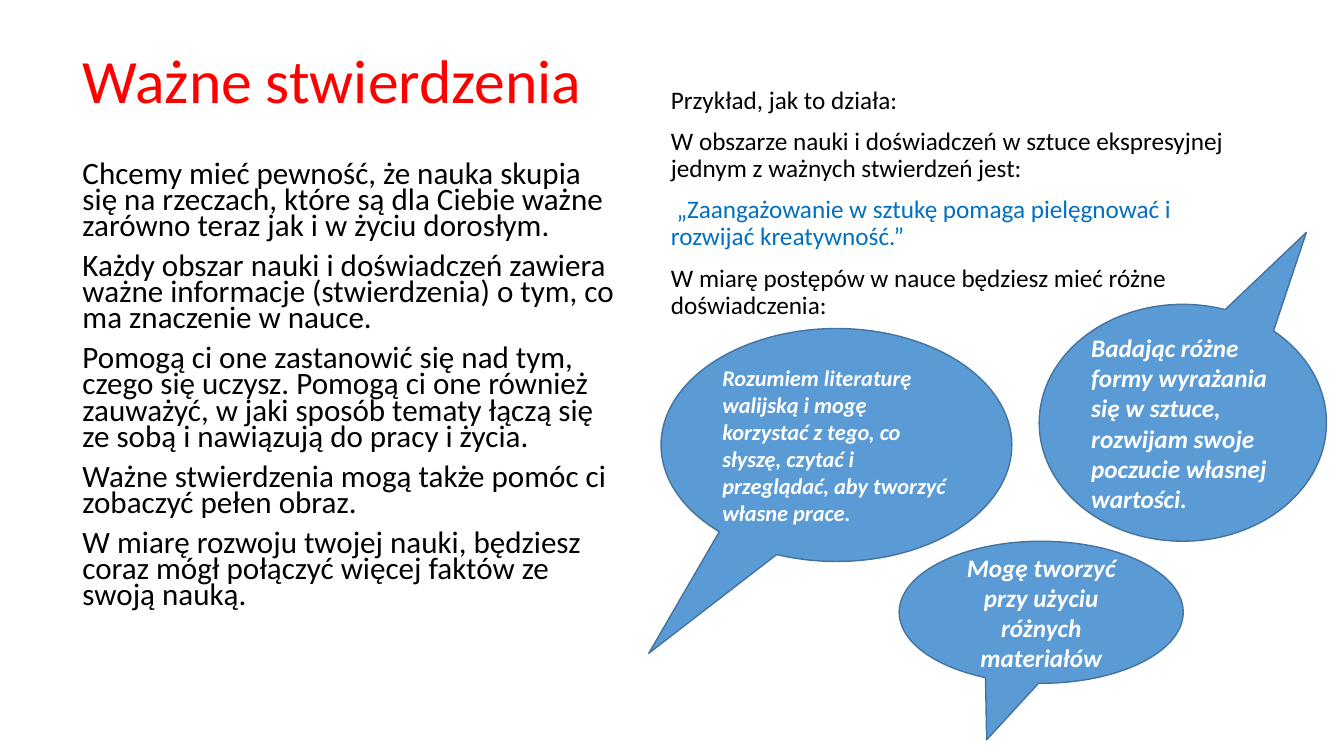
from pptx import Presentation
from pptx.dml.color import RGBColor
from pptx.enum.shapes import MSO_SHAPE as Shape
from pptx.enum.text import MSO_ANCHOR as Anchor, PP_ALIGN as Align
from pptx.util import Cm, Pt

RED = RGBColor(0xFF, 0x00, 0x00)
BLACK = RGBColor(0x00, 0x00, 0x00)
WHITE = RGBColor(0xFF, 0xFF, 0xFF)
QUOTE_BLUE = RGBColor(0x00, 0x70, 0xC0)
BUBBLE_BLUE = RGBColor(0x5B, 0x9B, 0xD5)
BUBBLE_EDGE = RGBColor(0x43, 0x73, 0x9E)
FONT = "Calibri"

TITLE = "Ważne stwierdzenia"
STATEMENTS = [
    "Chcemy mieć pewność, że nauka skupia się na rzeczach, które są dla Ciebie ważne "
    "zarówno teraz jak i w życiu dorosłym.",
    "Każdy obszar nauki i doświadczeń zawiera ważne informacje (stwierdzenia) o tym, "
    "co ma znaczenie w nauce.",
    "Pomogą ci one zastanowić się nad tym, czego się uczysz. Pomogą ci one również "
    "zauważyć, w jaki sposób tematy łączą się ze sobą i nawiązują do pracy i życia.",
    "Ważne stwierdzenia mogą także pomóc ci zobaczyć pełen obraz.",
    "W miarę rozwoju twojej nauki, będziesz coraz mógł połączyć więcej faktów ze "
    "swoją nauką.",
]
EXAMPLE = [
    "Przykład, jak to działa:",
    "W obszarze nauki i doświadczeń w sztuce ekspresyjnej jednym z ważnych "
    "stwierdzeń jest:",
    " „Zaangażowanie w sztukę pomaga pielęgnować i rozwijać kreatywność.”",
    "W miarę postępów w nauce będziesz mieć różne doświadczenia:",
]
QUOTE_INDEX = 2

# Box (left, top, width, height in cm), tail tip, text size, alignment, wording
BUBBLES = [
    ((16.66, 8.28, 8.84, 5.87), (-0.535, 0.894), 16, Align.LEFT,
     "Rozumiem literaturę walijską i mogę korzystać z tego, co słyszę, czytać i "
     "przeglądać, aby tworzyć własne prace."),
    ((26.19, 7.67, 7.24, 5.97), (0.43, -0.804), 18, Align.LEFT,
     "Badając różne formy wyrażania się w sztuce, rozwijam swoje poczucie własnej "
     "wartości."),
    ((22.66, 13.64, 7.16, 3.58), (-0.192, 0.898), 18, Align.CENTER,
     "Mogę tworzyć przy użyciu różnych materiałów"),
]


def style_runs(paragraph, size, color, emphasis=None):
    """Format every run; emphasis switches bold and italic together."""
    for run in paragraph.runs:
        font = run.font
        font.name, font.size = FONT, Pt(size)
        font.bold = font.italic = emphasis
        font.color.rgb = color


def add_text(slide, box, paragraphs, size, color, line_spacing):
    frame = slide.shapes.add_textbox(*map(Cm, box)).text_frame
    frame.word_wrap = True
    frame.text = "\n".join(paragraphs)
    for paragraph in frame.paragraphs:
        paragraph.line_spacing = line_spacing
        paragraph.space_before = Pt(10)
        style_runs(paragraph, size, color)
    return frame


def add_bubble(slide, box, tail, size, alignment, wording):
    bubble = slide.shapes.add_shape(Shape.OVAL_CALLOUT, *map(Cm, box))
    bubble.adjustments[0], bubble.adjustments[1] = tail
    bubble.shadow.inherit = False
    bubble.fill.solid()
    bubble.fill.fore_color.rgb = BUBBLE_BLUE
    bubble.line.color.rgb = BUBBLE_EDGE
    bubble.line.width = Pt(1)
    frame = bubble.text_frame
    frame.word_wrap = True
    frame.vertical_anchor = Anchor.MIDDLE
    frame.text = wording
    paragraph = frame.paragraphs[0]
    paragraph.alignment = alignment
    style_runs(paragraph, size, WHITE, emphasis=True)


def main():
    deck = Presentation()
    deck.slide_width, deck.slide_height = Cm(33.87), Cm(19.05)
    slide = deck.slides.add_slide(deck.slide_layouts[6])

    title = add_text(slide, (1.83, -0.51, 29.72, 5.21), [TITLE], 44, RED, 0.9)
    title.vertical_anchor = Anchor.MIDDLE
    title.paragraphs[0].space_before = Pt(0)

    add_text(slide, (1.83, 3.99, 14.02, 14.02), STATEMENTS, 22.2, BLACK, 0.7)

    example = add_text(slide, (16.66, 1.02, 14.88, 16.18), EXAMPLE, 18, BLACK, 0.9)
    example.margin_top = Cm(1.18)
    style_runs(example.paragraphs[QUOTE_INDEX], 18, QUOTE_BLUE)

    for bubble in BUBBLES:
        add_bubble(slide, *bubble)

    deck.save("out.pptx")


if __name__ == "__main__":
    main()
